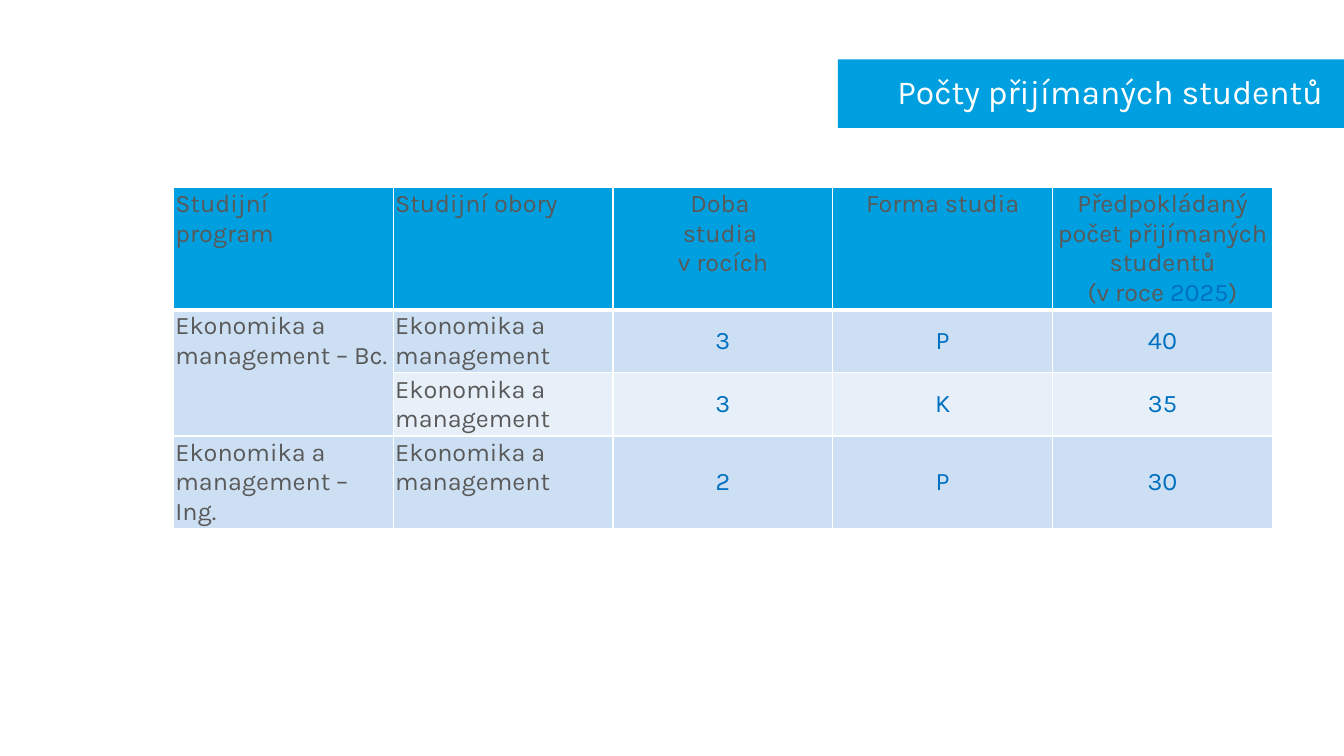
from lxml.etree import SubElement
from pptx import Presentation
from pptx.dml.color import RGBColor
from pptx.enum.text import MSO_ANCHOR as Anchor, MSO_AUTO_SIZE as AutoSize, PP_ALIGN as Align
from pptx.oxml.ns import qn
from pptx.util import Inches, Pt

FONT = "Karla"
COLORS = {
    "cyan": "009FDF",
    "white": "FFFFFF",
    "gray": "595959",
    "blue": "0070C0",
    "band": "CCDFF3",
    "light_band": "E7F0F9",
}
ROW_FILLS = ["cyan", "band", "light_band", "band"]
ROW_HEIGHTS = [1.2, 0.62, 0.62, 0.91]
COLUMN_WIDTH = 2.18
TEXT_COLUMNS = 2

HEADINGS = [
    [[("Studijní \nprogram", "gray")]],
    [[("Studijní obory", "gray")]],
    [[("Doba \nstudia \nv rocích", "gray")]],
    [[("Forma studia", "gray")]],
    [
        [("Předpokládaný počet přijímaných studentů", "gray")],
        [("(v roce ", "gray"), ("2025", "blue"), (")", "gray")],
    ],
]
PROGRAMMES = [
    ("Ekonomika a\nmanagement – Bc.", "Ekonomika a management", "3", "P", "40"),
    ("", "Ekonomika a management", "3", "K", "35"),
    ("Ekonomika a management – Ing.", "Ekonomika a management", "2", "P", "30"),
]


def rgb(name):
    return RGBColor.from_string(COLORS[name])


def add_text(paragraph, text, size, color):
    for number, line in enumerate(text.split("\n")):
        if number:
            paragraph.add_line_break()
        run = paragraph.add_run()
        run.text = line
        run.font.name = FONT
        run.font.size = Pt(size)
        run.font.bold = False
        run.font.color.rgb = rgb(color)


def set_borders(cell, top, bottom):
    properties = cell._tc.get_or_add_tcPr()
    for side, width in (("L", 1), ("R", 1), ("T", top), ("B", bottom)):
        line = SubElement(properties, qn(f"a:ln{side}"), w=str(Pt(width)))
        fill = SubElement(line, qn("a:solidFill"))
        SubElement(fill, qn("a:srgbClr"), val=COLORS["white"])


def format_cell(cell, row, column):
    cell.margin_left = cell.margin_right = Inches(0.02)
    cell.margin_top = cell.margin_bottom = Inches(0.02)
    centred = row > 0 and column >= TEXT_COLUMNS
    cell.vertical_anchor = Anchor.MIDDLE if centred else Anchor.TOP
    set_borders(cell, 3 if row == 1 else 1, 3 if row == 0 else 1)
    cell.fill.solid()
    cell.fill.fore_color.rgb = rgb(ROW_FILLS[row])


def fill_cell(cell, paragraphs, align):
    frame = cell.text_frame
    for number, runs in enumerate(paragraphs):
        paragraph = frame.add_paragraph() if number else frame.paragraphs[0]
        paragraph.alignment = align
        for text, color in runs:
            add_text(paragraph, text, 18, color)


def programme_cells(values):
    return [
        [[(value, "gray" if column < TEXT_COLUMNS else "blue")]] if value else []
        for column, value in enumerate(values)
    ]


def add_admissions_table(slide):
    rows = [HEADINGS] + [programme_cells(values) for values in PROGRAMMES]
    count = len(HEADINGS)
    admissions = slide.shapes.add_table(
        len(rows), count, Inches(1.72), Inches(1.86),
        Inches(COLUMN_WIDTH * count), Inches(sum(ROW_HEIGHTS)),
    ).table
    for row, height in zip(admissions.rows, ROW_HEIGHTS):
        row.height = Inches(height)
    for row, cells in enumerate(rows):
        for column, paragraphs in enumerate(cells):
            cell = admissions.cell(row, column)
            format_cell(cell, row, column)
            fill_cell(cell, paragraphs, Align.LEFT if column < TEXT_COLUMNS else Align.CENTER)
    admissions.cell(1, 0).merge(admissions.cell(2, 0))


def format_title(slide, text):
    title = slide.shapes.title
    title.left, title.top = Inches(8.31), Inches(0.59)
    title.width, title.height = Inches(5.02), Inches(0.68)
    title.fill.solid()
    title.fill.fore_color.rgb = rgb("cyan")
    frame = title.text_frame
    frame.auto_size = AutoSize.NONE
    frame.word_wrap = True
    frame.vertical_anchor = Anchor.MIDDLE
    frame.margin_left, frame.margin_right = Inches(0.59), Inches(0.1)
    frame.margin_top = frame.margin_bottom = Inches(0.05)
    heading = frame.paragraphs[0]
    heading.alignment = Align.LEFT
    heading.line_spacing = 0.9
    add_text(heading, text, 24, "white")


def main():
    deck = Presentation()
    deck.slide_width, deck.slide_height = Inches(13.33), Inches(7.5)
    slide = deck.slides.add_slide(deck.slide_layouts[5])
    format_title(slide, "Počty přijímaných studentů")
    add_admissions_table(slide)
    deck.save("out.pptx")


if __name__ == "__main__":
    main()
